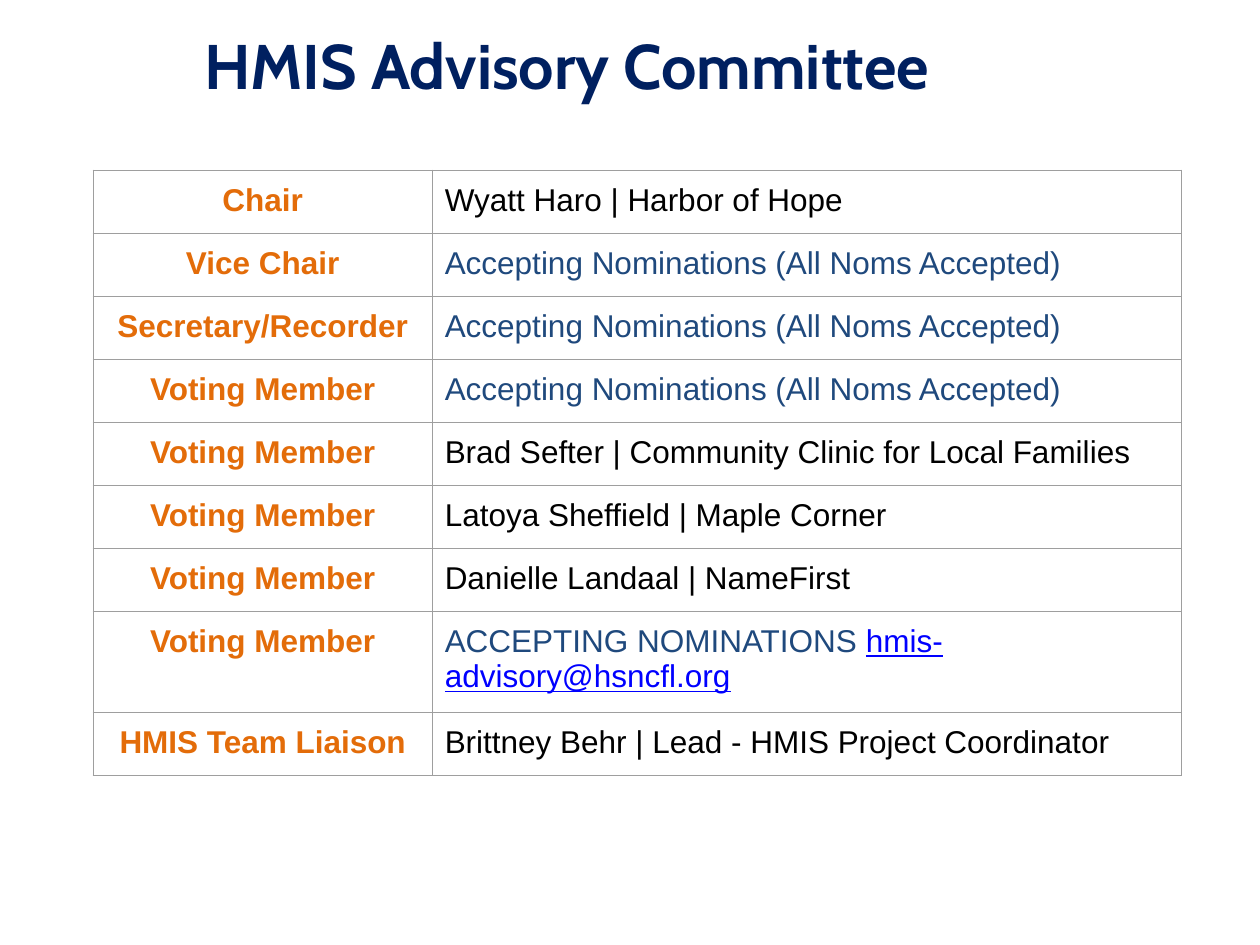
from lxml import etree
from pptx import Presentation
from pptx import util as u
from pptx.dml.color import RGBColor
from pptx.enum import text
from pptx.oxml.ns import qn

NAVY, ORANGE, BLUE = "002060", "E36C09", "1F497D"
BLACK, LINK, GRAY = "000000", "0000FF", "9E9E9E"

OPEN_SEAT = [("Accepting Nominations (All Noms Accepted)", BLUE)]
MEMBERS = [
    ("Chair", [("Wyatt Haro | Harbor of Hope", BLACK)]),
    ("Vice Chair", OPEN_SEAT),
    ("Secretary/Recorder", OPEN_SEAT),
    ("Voting Member", OPEN_SEAT),
    ("Voting Member", [("Brad Sefter | Community Clinic for Local Families", BLACK)]),
    ("Voting Member", [("Latoya Sheffield | Maple Corner", BLACK)]),
    ("Voting Member", [("Danielle Landaal | NameFirst", BLACK)]),
    ("Voting Member", [("ACCEPTING NOMINATIONS ", BLUE),
                       ("hmis-advisory@hsncfl.org", LINK)]),
    ("HMIS Team Liaison", [("Brittney Behr | Lead - HMIS Project Coordinator", BLACK)]),
]
COLUMN_WIDTHS = (2.69, 5.95)
ROW_HEIGHT = 0.5


def set_font(font, name, size, color, bold=False):
    font.name, font.size, font.bold = name, u.Pt(size), bold
    font.color.rgb = RGBColor.from_string(color)


def add_title(page, words):
    box = page.shapes.add_textbox(u.Inches(0), u.Inches(0), u.Inches(9), u.Inches(1.02))
    frame = box.text_frame
    frame.word_wrap = True
    frame.vertical_anchor = text.MSO_ANCHOR.MIDDLE
    frame.text = words
    para = frame.paragraphs[0]
    para.alignment = text.PP_ALIGN.CENTER
    set_font(para.runs[0].font, "Cabin", 36, NAVY, bold=True)


def add_borders(cell):
    # Borders come before the fill in the cell properties
    properties = cell._tc.get_or_add_tcPr()
    for index, side in enumerate(("lnL", "lnR", "lnT", "lnB")):
        line = etree.Element(qn(f"a:{side}"), w=str(u.Pt(0.75)))
        fill = etree.SubElement(line, qn("a:solidFill"))
        etree.SubElement(fill, qn("a:srgbClr"), val=GRAY)
        properties.insert(index, line)


def fill_cell(cell, spans, alignment, bold=False):
    cell.fill.background()
    add_borders(cell)
    cell.margin_left = cell.margin_right = u.Inches(0.1)
    cell.margin_top = cell.margin_bottom = u.Inches(0.1)
    para = cell.text_frame.paragraphs[0]
    para.alignment = alignment
    for words, color in spans:
        span = para.add_run()
        span.text = words
        set_font(span.font, "Arial", 18, color, bold)
        if color == LINK:
            span.font.underline = True


def add_member_table(page):
    frame = page.shapes.add_table(
        len(MEMBERS), len(COLUMN_WIDTHS), u.Inches(0.74), u.Inches(1.35),
        u.Inches(sum(COLUMN_WIDTHS)), u.Inches(ROW_HEIGHT * len(MEMBERS)))
    table = frame.table
    table.first_row = table.horz_banding = False
    for column, width in zip(table.columns, COLUMN_WIDTHS):
        column.width = u.Inches(width)
    for row, (role, holder) in zip(table.rows, MEMBERS):
        row.height = u.Inches(ROW_HEIGHT)
        fill_cell(row.cells[0], [(role, ORANGE)], text.PP_ALIGN.CENTER, bold=True)
        fill_cell(row.cells[1], holder, text.PP_ALIGN.LEFT)


def main():
    deck = Presentation()
    deck.slide_width, deck.slide_height = u.Inches(10), u.Inches(7.5)
    page = deck.slides.add_slide(deck.slide_layouts[6])
    add_title(page, "HMIS Advisory Committee")
    add_member_table(page)
    deck.save("out.pptx")


if __name__ == "__main__":
    main()
